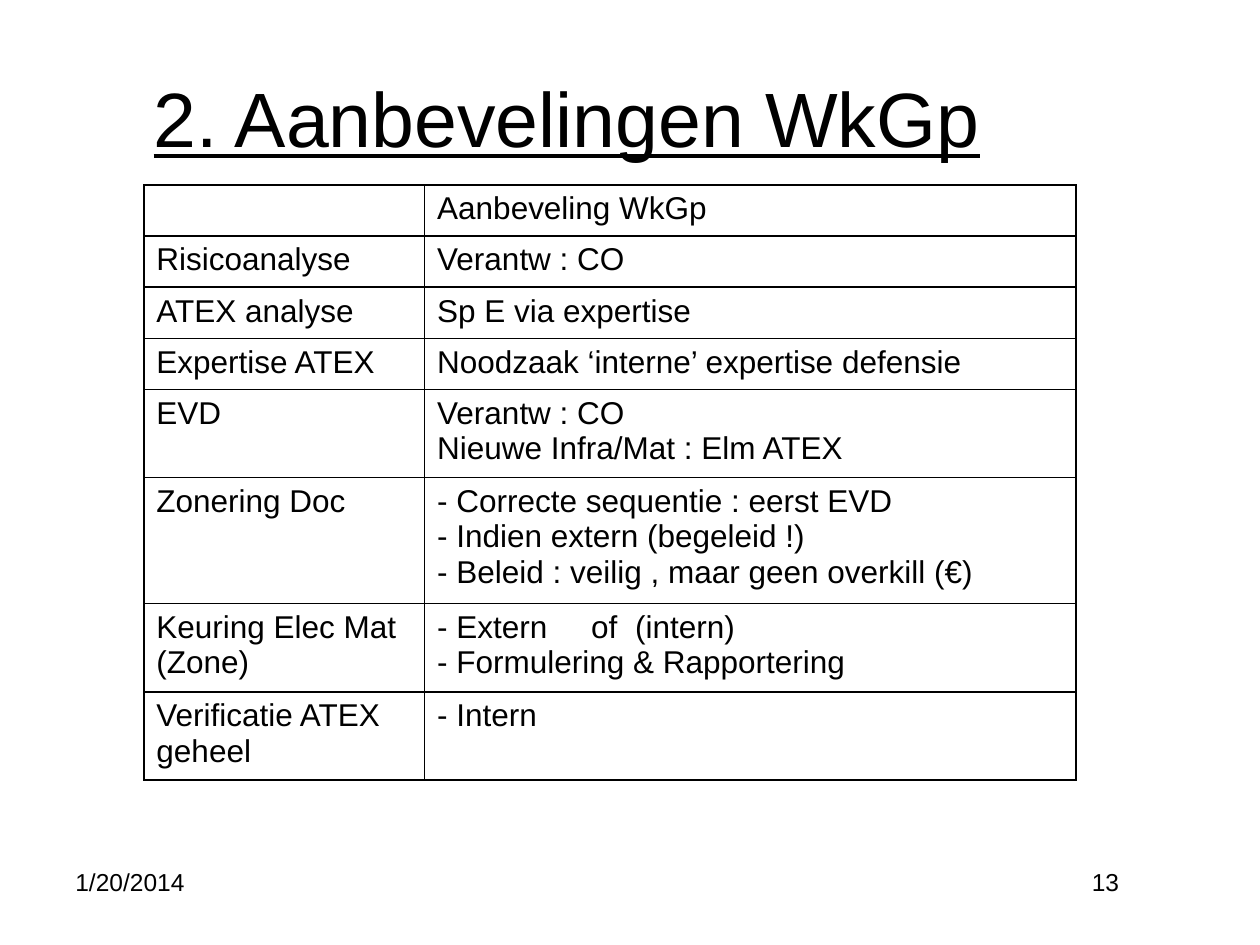
from pptx import Presentation
from pptx.dml.color import RGBColor
from pptx.enum.text import MSO_ANCHOR as Anchor, PP_ALIGN as Align
from pptx.oxml import parse_xml
from pptx.oxml.ns import nsdecls
from pptx.util import Cm, Pt

BLACK = RGBColor(0, 0, 0)
WHITE = RGBColor(255, 255, 255)
COLS = (5.66, 13.13)
ROW = 1.03
STOPS = (3.1, 3.99)
ROWS = [
    ("", "Aanbeveling WkGp"),
    ("Risicoanalyse", "Verantw : CO"),
    ("ATEX analyse", "Sp E via expertise"),
    ("Expertise ATEX", "Noodzaak ‘interne’ expertise defensie"),
    ("EVD", "Verantw : CO\nNieuwe Infra/Mat : Elm ATEX"),
    ("Zonering Doc", "- Correcte sequentie : eerst EVD\n- Indien extern (begeleid !)\n"
                     "- Beleid : veilig , maar geen overkill (€)"),
    ("Keuring Elec Mat (Zone)", "- Extern\tof\t(intern)\n- Formulering & Rapportering"),
    ("Verificatie ATEX geheel", "- Intern"),
]


class Page:
    """Hold the text style and the current slide, and draw elements on it."""

    def __init__(self, slide, face="Arial", ink=BLACK):
        self.slide, self.face, self.ink = slide, face, ink

    def words(self, frame, text, size, align=Align.LEFT, under=None):
        frame.text = text
        for para in frame.paragraphs:
            if "\t" in para.text:
                self.tabs(para)
            para.alignment = align
            font = para.font
            font.name, font.size, font.underline = self.face, Pt(size), under
            font.color.rgb = self.ink

    def tabs(self, para):
        stops = "".join(f'<a:tab pos="{Cm(stop)}" algn="l"/>' for stop in STOPS)
        props = para._p.get_or_add_pPr()
        props.append(parse_xml(f'<a:tabLst {nsdecls("a")}>{stops}</a:tabLst>'))

    def label(self, text, box, size, align=Align.LEFT, anchor=Anchor.TOP, under=None):
        frame = self.slide.shapes.add_textbox(*map(Cm, box)).text_frame
        frame.word_wrap = True
        frame.vertical_anchor = anchor
        self.words(frame, text, size, align, under)

    def border(self, cell):
        props = cell._tc.get_or_add_tcPr()
        for spot, side in enumerate(("lnL", "lnR", "lnT", "lnB")):
            line = (f'<a:{side} {nsdecls("a")} w="{Pt(1)}"><a:solidFill>'
                    f'<a:srgbClr val="{self.ink}"/></a:solidFill></a:{side}>')
            props.insert(spot, parse_xml(line))

    def grid(self, rows, left, top, size):
        box = map(Cm, (left, top, sum(COLS), ROW * len(rows)))
        table = self.slide.shapes.add_table(len(rows), len(COLS), *box).table
        table.first_row = table.horz_banding = False
        for col, width in zip(table.columns, COLS):
            col.width = Cm(width)
        for row, texts in zip(table.rows, rows):
            row.height = Cm(ROW)
            for cell, text in zip(row.cells, texts):
                cell.fill.solid()
                cell.fill.fore_color.rgb = WHITE
                self.border(cell)
                self.words(cell.text_frame, text, size)


def main():
    deck = Presentation()
    deck.slide_width, deck.slide_height = Cm(25.4), Cm(19.05)
    page = Page(deck.slides.add_slide(deck.slide_layouts[6]))
    page.label("1/20/2014", (1.27, 17.35, 5.92, 1.32), 14)
    page.label("13", (16.89, 17.35, 5.92, 1.32), 14, Align.RIGHT)
    page.label("2. Aanbevelingen WkGp", (0, 0.76, 22.86, 3.18), 44,
               Align.CENTER, Anchor.MIDDLE, True)
    page.grid(ROWS, 2.9, 3.73, 18)
    deck.save("out.pptx")


if __name__ == "__main__":
    main()
